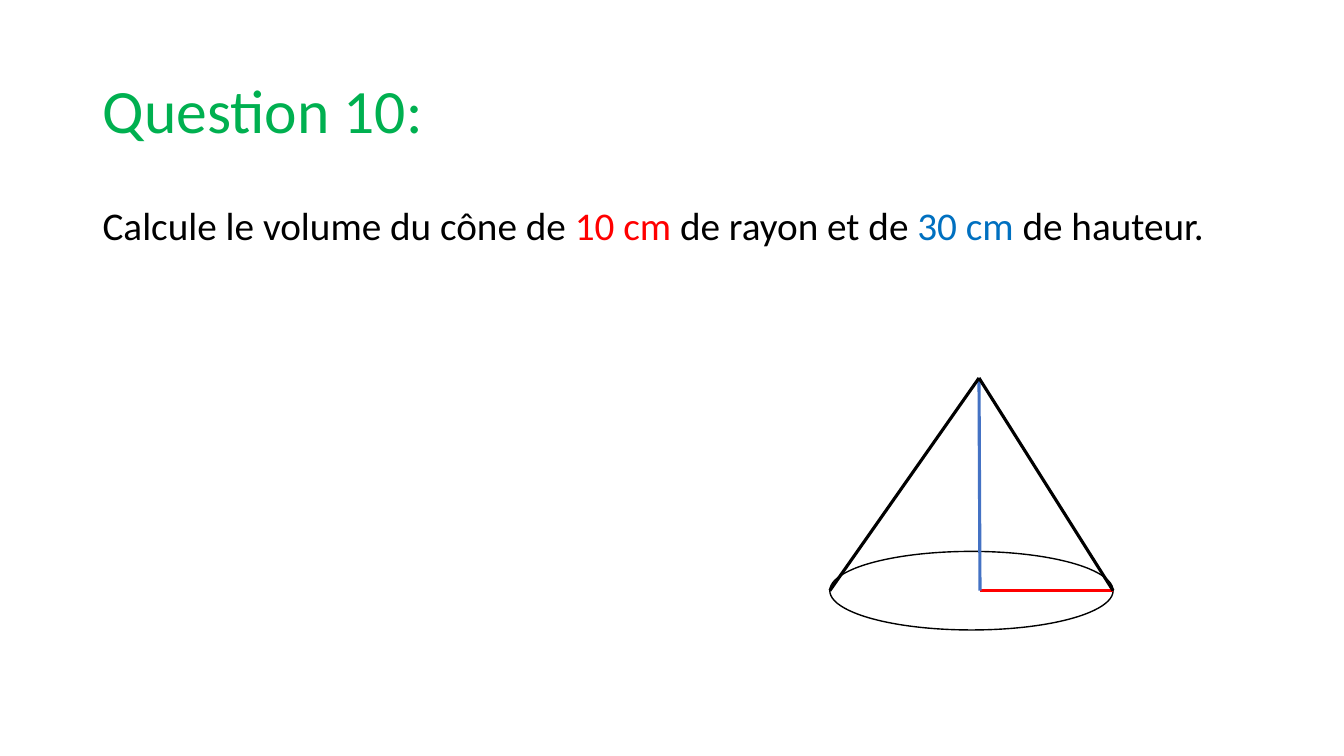
from lxml.etree import SubElement
from pptx import Presentation
from pptx.dml.color import RGBColor
from pptx.enum.shapes import MSO_CONNECTOR as CONN, MSO_SHAPE as SHAPE
from pptx.enum.text import MSO_ANCHOR as ANCHOR, MSO_AUTO_SIZE as AUTO, PP_ALIGN as ALIGN
from pptx.oxml.ns import qn
from pptx.util import Pt

PX = 9144  # 100 px to the inch
BLACK, RED = "000000", "FF0000"


def rgb(code):
    return RGBColor.from_string(code)


def write(shape, anchor, size, runs):
    tf = shape.text_frame
    tf.word_wrap = True
    tf.auto_size = AUTO.NONE
    tf.vertical_anchor = anchor
    p = tf.paragraphs[0]
    p.alignment = ALIGN.LEFT
    p.line_spacing = 0.9
    for text, color in runs:
        r = p.add_run()
        r.text = text
        r.font.name = "Calibri"
        r.font.size = Pt(size)
        r.font.color.rgb = rgb(color)
    return p


prs = Presentation()
prs.slide_width, prs.slide_height = 1333 * PX, 750 * PX
s = prs.slides.add_slide(prs.slide_layouts[5])

# Title
title = s.shapes.title
title.left, title.top, title.width, title.height = 92 * PX, 40 * PX, 1150 * PX, 145 * PX
write(title, ANCHOR.MIDDLE, 44, [("Question 10:", "00B050")])

# Question
question = s.shapes.add_textbox(92 * PX, 200 * PX, 1150 * PX, 476 * PX)
p = write(question, ANCHOR.TOP, 28, [
    ("Calcule le volume du cône de ", BLACK),
    ("10 cm ", RED),
    ("de rayon et de ", BLACK),
    ("30 cm ", "0070C0"),
    ("de hauteur.", BLACK),
])
p.space_before = Pt(10)
pPr = p._p.get_or_add_pPr()
pPr.set("marL", str(25 * PX))
pPr.set("indent", str(-25 * PX))

# Base of the cone
base = s.shapes.add_shape(SHAPE.OVAL, 823 * PX, 547 * PX, 281 * PX, 78 * PX)
base.shadow.inherit = False
base.fill.background()
base.line.color.rgb = rgb(BLACK)
base.line.width = Pt(1)

# Radius, height and the two sides
apex, center = (971, 375), (972, 586)
left, right = (823, 586), (1104, 586)
for start, end, color in [
    (center, right, RED),
    (apex, center, "4472C4"),
    (apex, left, BLACK),
    (apex, right, BLACK),
]:
    x1, y1, x2, y2 = (v * PX for v in start + end)
    line = s.shapes.add_connector(CONN.STRAIGHT, x1, y1, x2, y2)
    line.line.color.rgb = rgb(color)
    line.line.width = Pt(2.25)
    SubElement(line._element.spPr, qn("a:effectLst"))

prs.save("out.pptx")
